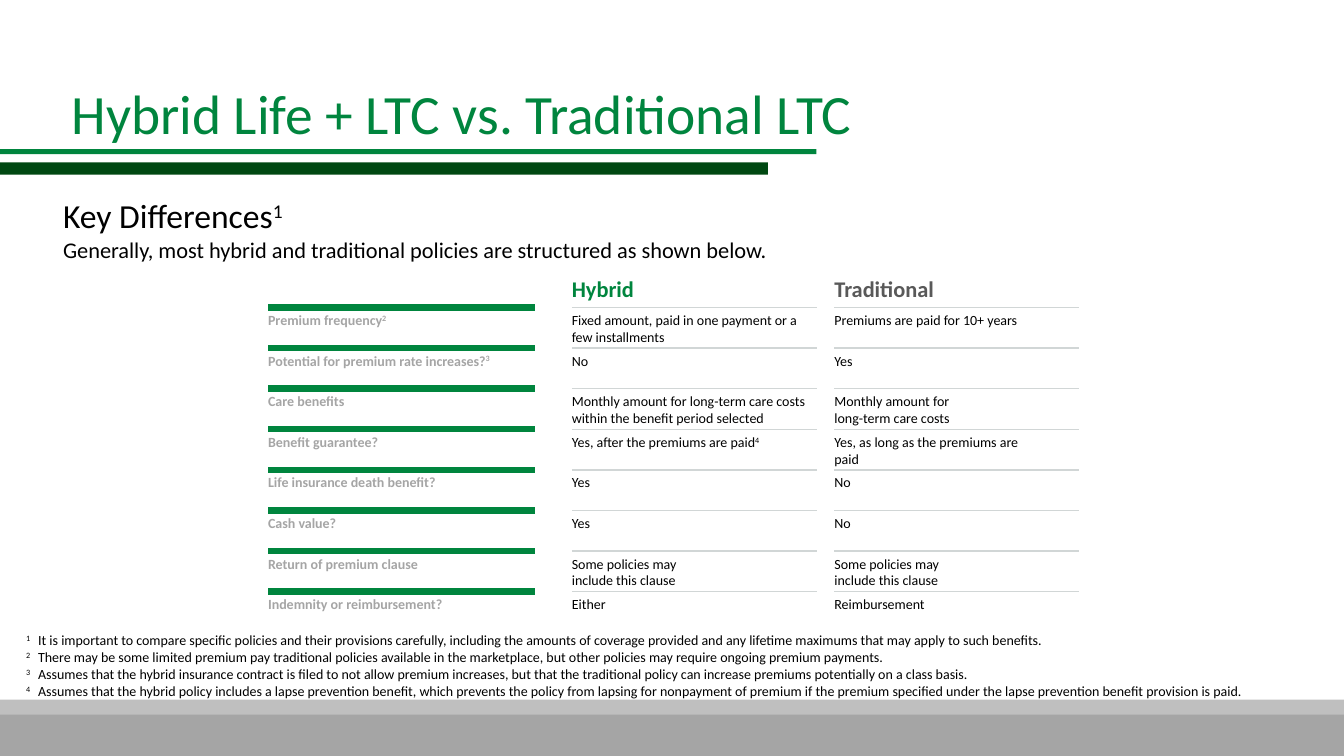
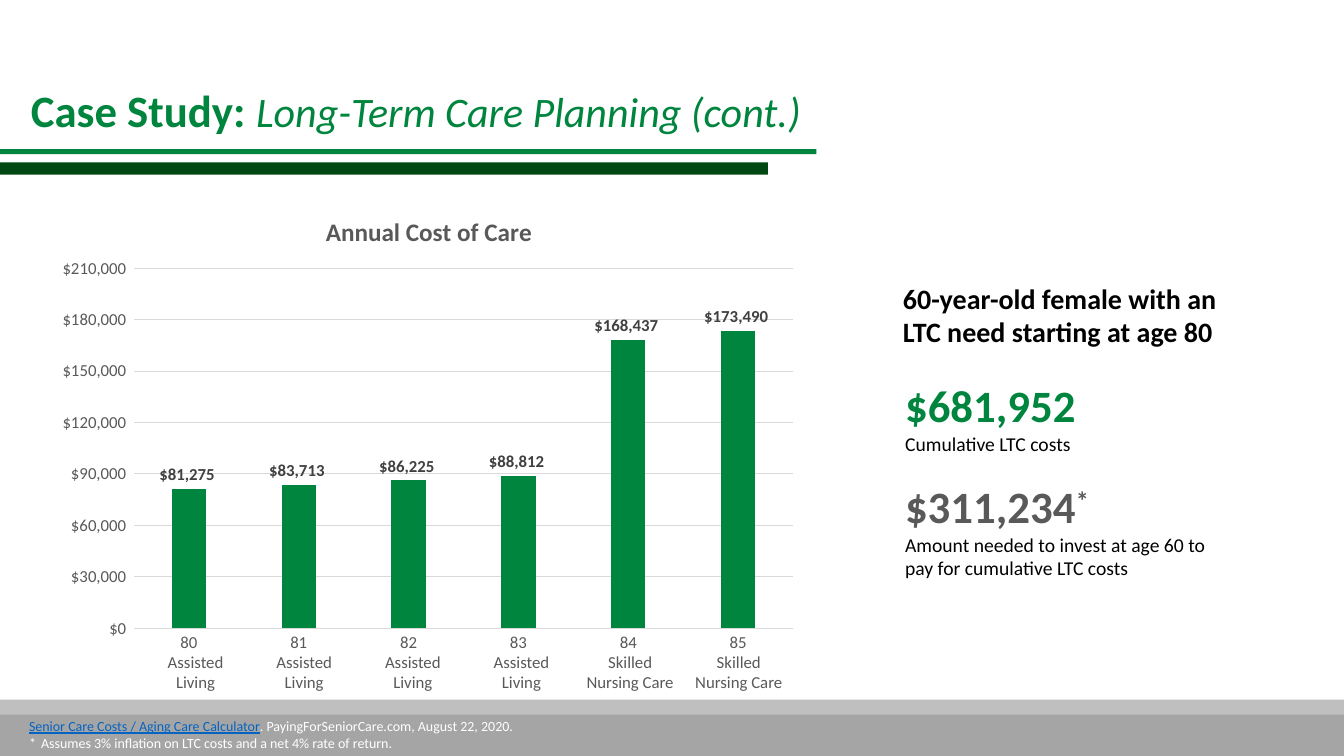
from lxml.etree import SubElement
from pptx import Presentation
from pptx.chart.data import CategoryChartData
from pptx.dml.color import RGBColor
from pptx.enum.chart import XL_CHART_TYPE, XL_LABEL_POSITION, XL_TICK_MARK
from pptx.enum.shapes import MSO_CONNECTOR, MSO_SHAPE
from pptx.enum.text import MSO_ANCHOR, PP_ALIGN
from pptx.oxml.ns import qn
from pptx.util import Pt

GREEN, DARK_GREEN, BLACK, WHITE = "00853E", "004812", "000000", "FFFFFF"
SLATE, GRAY, LIGHT_GRAY, LINK_BLUE = "595959", "A5A5A5", "BFBFBF", "0563C1"
RULE_GRAY, GRID_GRAY, LABEL_GRAY = "D1D6D6", "D9D9D9", "404040"
FONT = "Calibri"
FLUSH = dict.fromkeys(("margin_left", "margin_top", "margin_right", "margin_bottom"), 0)
HANGING = Pt(8.64)


def paint(fill, color):
    fill.solid()
    fill.fore_color.rgb = RGBColor.from_string(color)


def add_text(slide, box, paragraphs, frame_format={}, paragraph_format={}, hanging=0):
    frame = slide.shapes.add_textbox(*map(Pt, box)).text_frame
    frame.word_wrap = True
    for name, value in frame_format.items():
        setattr(frame, name, value)
    for index, runs in enumerate(paragraphs):
        paragraph = frame.add_paragraph() if index else frame.paragraphs[0]
        for name, value in paragraph_format.items():
            setattr(paragraph, name, value)
        if hanging:
            properties = paragraph._p.get_or_add_pPr()
            properties.set("marL", str(hanging))
            properties.set("indent", str(-hanging))
        for text, size, color, *styles in runs:
            for part_index, part in enumerate(text.split("^")):
                for line_index, line in enumerate(part.split("\n")):
                    if line_index:
                        paragraph.add_line_break()
                    if not line:
                        continue
                    run = paragraph.add_run()
                    run.text = line
                    font_format = {"name": FONT, "size": Pt(size), **dict.fromkeys(styles, True)}
                    for name, value in font_format.items():
                        setattr(run.font, name, value)
                    paint(run.font.fill, color)
                    if part_index % 2:
                        run._r.get_or_add_rPr().set("baseline", "30000")


presentation = Presentation()
presentation.slide_width, presentation.slide_height = Pt(960), Pt(540)

bands = [
    ((0, 504, 960, 36), GRAY),
    ((0, 499.7, 960, 10.8), LIGHT_GRAY),
    ((0, 106.5, 583.2, 3.6), GREEN),
    ((0, 116, 548.6, 8.8), DARK_GREEN),
]
titles = [
    ((44, 53, 634, 60), [("Hybrid Life + LTC vs. Traditional LTC", 39.6, GREEN)]),
    ((15, 29, 828, 104), [
        ("Case Study: ", 32, GREEN, "bold"),
        ("Long-Term Care Planning (cont.)", 30, GREEN, "italic"),
    ]),
]
slides = []
for title_box, title_runs in titles:
    slide = presentation.slides.add_slide(presentation.slide_layouts[6])
    for band_box, color in bands:
        band = slide.shapes.add_shape(MSO_SHAPE.RECTANGLE, *map(Pt, band_box))
        band.shadow.inherit = False
        paint(band.fill, color)
        band.line.fill.background()
    add_text(slide, title_box, [title_runs],
             {"vertical_anchor": MSO_ANCHOR.MIDDLE}, {"line_spacing": 0.9})
    slides.append(slide)
comparison_slide, case_slide = slides

add_text(comparison_slide, (38, 136, 653, 56), [
    [("Key Differences^1^", 24, BLACK)],
    [("Generally, most hybrid and traditional policies are structured as shown below.", 16, BLACK)],
])

rows_top, row_pitch = 219.6, 29
columns = [
    (191.5, 191, 191, GREEN, 4.5, (10, GRAY, "bold"), [
        "Premium frequency^2^", "Potential for premium rate increases?^3^", "Care benefits",
        "Benefit guarantee?", "Life insurance death benefit?", "Cash value?",
        "Return of premium clause", "Indemnity or reimbursement?",
    ]),
    (408.5, 175, 175, RULE_GRAY, 1, (10, BLACK), [
        "Fixed amount, paid in one payment or a few installments", "No",
        "Monthly amount for long-term care costs within the benefit period selected",
        "Yes, after the premiums are paid^4^", "Yes", "Yes",
        "Some policies may \ninclude this clause", "Either",
    ]),
    (596, 175, 134, RULE_GRAY, 1, (10, BLACK), [
        "Premiums are paid for 10+ years", "Yes", "Monthly amount for \nlong-term care costs",
        "Yes, as long as the premiums are paid", "No", "No",
        "Some policies may \ninclude this clause", "Reimbursement",
    ]),
]
for left, rule_width, text_width, rule_color, weight, style, cells in columns:
    for row, cell in enumerate(cells):
        top = rows_top + row * row_pitch
        rule = comparison_slide.shapes.add_connector(
            MSO_CONNECTOR.STRAIGHT, Pt(left), Pt(top), Pt(left + rule_width), Pt(top))
        rule.line.width = Pt(weight)
        paint(rule.line.fill, rule_color)
        SubElement(rule._element.spPr, qn("a:effectLst"))
        add_text(comparison_slide, (left, top + 2.9, text_width, 24.4), [[(cell, *style)]], FLUSH)

for left, heading, color in [(408.5, "Hybrid", GREEN), (596, "Traditional", SLATE)]:
    add_text(comparison_slide, (left, 196.6, 151, 19.4), [[(heading, 16, color, "bold")]], FLUSH)

footnotes = [
    "^1^\tIt is important to compare specific policies and their provisions carefully, including the amounts of coverage provided and any lifetime maximums that may apply to such benefits.",
    "^2^\tThere may be some limited premium pay traditional policies available in the marketplace, but other policies may require ongoing premium payments.",
    "^3^\tAssumes that the hybrid insurance contract is filed to not allow premium increases, but that the traditional policy can increase premiums potentially on a class basis.",
    "^4^\tAssumes that the hybrid policy includes a lapse prevention benefit, which prevents the policy from lapsing for nonpayment of premium if the premium specified under the lapse prevention benefit provision is paid.",
]
add_text(comparison_slide, (11.5, 447.8, 948, 56), [[(note, 10, BLACK)] for note in footnotes],
         hanging=HANGING)

dollars = '"$"#,##0_);[Red]\\("$"#,##0\\)'
chart_data = CategoryChartData(number_format=dollars)
chart_data.categories = ["80", "81", "82", "83", "84", "85"]
chart_data.add_series("Series 1", [81275, 83713, 86225, 88812, 168437, 173490])
chart = case_slide.shapes.add_chart(
    XL_CHART_TYPE.COLUMN_CLUSTERED, Pt(33.8), Pt(133.2), Pt(543.6), Pt(339.8), chart_data).chart
chart.has_legend = False
chart.has_title = True
title_frame = chart.chart_title.text_frame
title_frame.text = "Annual Cost of Care"
chart.chart_title.include_in_layout = False

plot = chart.plots[0]
plot.gap_width, plot.overlap, plot.vary_by_categories = 219, -27, False
paint(plot.series[0].format.fill, GREEN)
plot.has_data_labels = True
labels = plot.data_labels
label_format = {"show_value": True, "position": XL_LABEL_POSITION.OUTSIDE_END,
                "number_format": dollars, "number_format_is_linked": False}
for name, value in label_format.items():
    setattr(labels, name, value)

value_axis, category_axis = chart.value_axis, chart.category_axis
axis_format = {"minimum_scale": 0, "maximum_scale": 210000, "major_unit": 30000,
               "has_major_gridlines": True}
for name, value in axis_format.items():
    setattr(value_axis, name, value)
value_axis.tick_labels.number_format = dollars
value_axis.tick_labels.number_format_is_linked = False
value_axis.format.line.fill.background()
for axis in (value_axis, category_axis):
    axis.major_tick_mark = axis.minor_tick_mark = XL_TICK_MARK.NONE
for line in (category_axis.format.line, value_axis.major_gridlines.format.line):
    paint(line.fill, GRID_GRAY)
    line.width = Pt(0.75)
chart_fonts = [
    (chart.font, 10, BLACK, False),
    (title_frame.paragraphs[0].runs[0].font, 18, SLATE, True),
    (labels.font, 12, LABEL_GRAY, True),
    (value_axis.tick_labels.font, 12, SLATE, False),
    (category_axis.tick_labels.font, 12, SLATE, False),
]
for font, size, color, bold in chart_fonts:
    font.name, font.size, font.bold = FONT, Pt(size), bold
    paint(font.fill, color)

chart_layouts = [
    ("c:title", {"xMode": "edge", "yMode": "edge", "x": 0.36, "y": 0.05}),
    ("c:plotArea", {"layoutTarget": "inner", "xMode": "edge", "yMode": "edge",
                    "x": 0.114, "y": 0.172, "w": 0.866, "h": 0.757}),
]
for tag, values in chart_layouts:
    parent = chart._chartSpace.find(".//" + qn(tag))
    layout = parent.find(qn("c:layout"))
    if layout is None:
        layout = SubElement(parent, qn("c:layout"))
        parent.insert(1 if tag == "c:title" else 0, layout)
    manual = SubElement(layout, qn("c:manualLayout"))
    for name, value in values.items():
        SubElement(manual, qn("c:" + name)).set("val", str(value))

care_types = [("Assisted Living", 65)] * 4 + [("Skilled Nursing Care", 79)] * 2
for index, (care_type, width) in enumerate(care_types):
    center = 139.7 + 77.6 * index
    add_text(case_slide, (center - width / 2, 462.2, width, 36), [[(care_type, 12, SLATE)]],
             paragraph_format={"alignment": PP_ALIGN.CENTER})

summary = [
    ((645, 201, 231, 48), [
        [("60-year-old female with an", 20, BLACK, "bold")],
        [("LTC need starting at age 80", 20, BLACK, "bold")],
    ]),
    ((646.5, 270, 181, 60), [
        [("$681,952", 32, GREEN, "bold")],
        [("Cumulative LTC costs", 14, BLACK)],
    ]),
    ((646.5, 342, 230, 76), [
        [("$311,234^*^", 32, SLATE, "bold")],
        [("Amount needed to invest at age 60 to pay for cumulative LTC costs", 14, BLACK)],
    ]),
]
for box, paragraphs in summary:
    add_text(case_slide, box, paragraphs, FLUSH)

add_text(case_slide, (13.7, 509, 584, 31), [
    [("Senior Care Costs / Aging Care Calculator", 10, LINK_BLUE, "underline"),
     (". PayingForSeniorCare.com, August 22, 2020.", 10, WHITE)],
    [("*\tAssumes 3% inflation on LTC costs and a net 4% rate of return.", 10, WHITE)],
], hanging=HANGING)

presentation.save("out.pptx")
